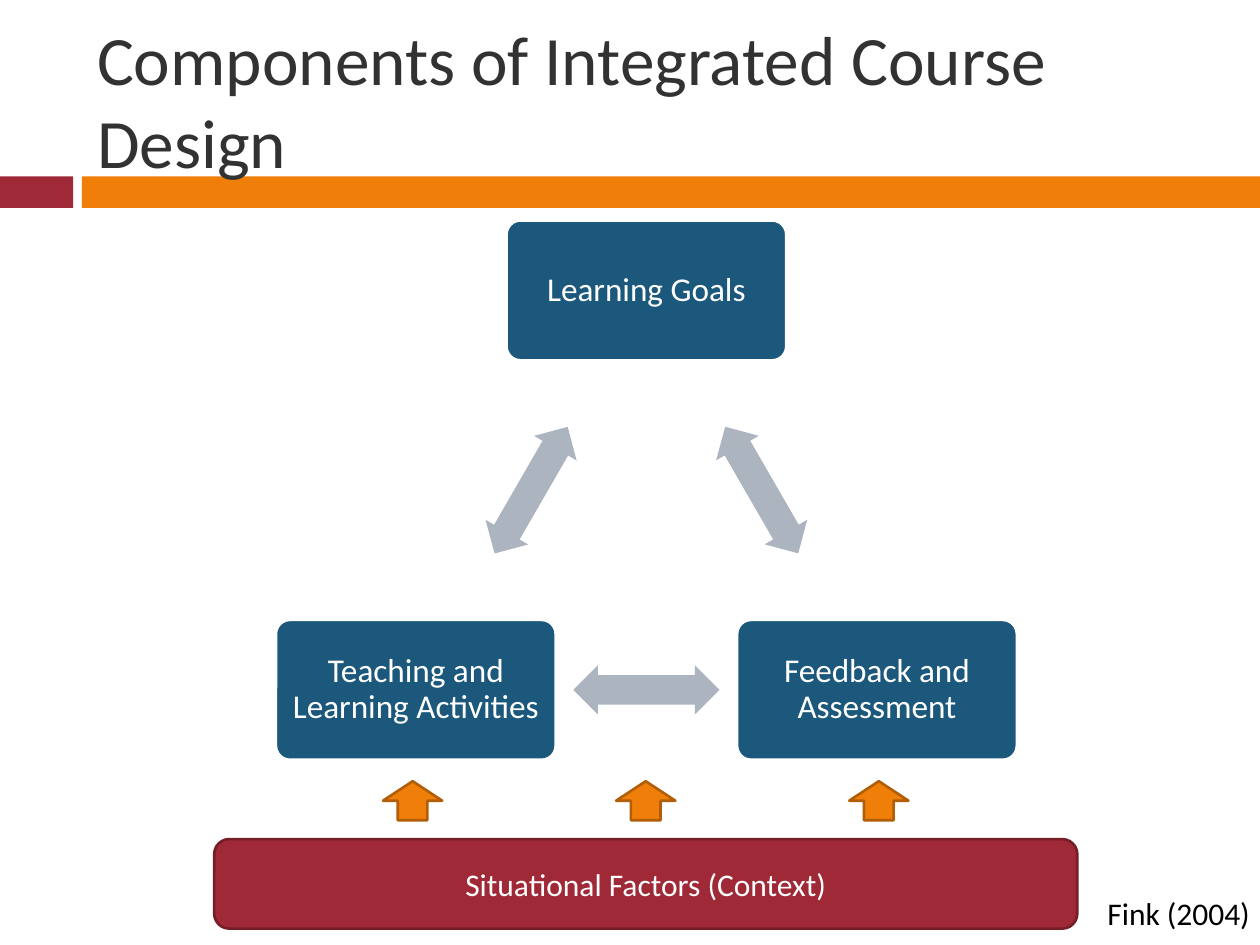
from pptx import Presentation
from pptx.dml.color import RGBColor
from pptx.enum.shapes import MSO_SHAPE
from pptx.enum.text import MSO_ANCHOR, MSO_AUTO_SIZE, PP_ALIGN
from pptx.util import Inches, Pt

COLORS = {
    "red": "9F2936", "dark_red": "761E28",
    "orange": "F07F09", "dark_orange": "B25E07",
    "blue": "1B587C", "gray": "ACB5BF",
    "title": "323232", "white": "FFFFFF", "black": "000000",
}


def color(name):
    return RGBColor.from_string(COLORS[name])


def write(shape, text, size, ink, align=PP_ALIGN.CENTER, anchor=MSO_ANCHOR.MIDDLE,
          spacing=None, inset=None, wrap=True):
    frame = shape.text_frame
    frame.word_wrap = wrap
    frame.vertical_anchor = anchor
    if inset is not None:
        frame.margin_left = frame.margin_right = Inches(inset)
        frame.margin_top = frame.margin_bottom = Inches(inset)
    para = frame.paragraphs[0]
    para.alignment = align
    if spacing:
        para.line_spacing = spacing
    span = para.add_run()
    span.text = text
    span.font.size = Pt(size)
    span.font.name = "Calibri"
    span.font.color.rgb = color(ink)


def add_block(page, kind, box, fill, line=None, adjustments=(), rotation=0):
    shape = page.shapes.add_shape(kind, *(Inches(length) for length in box))
    shape.shadow.inherit = False
    shape.fill.solid()
    shape.fill.fore_color.rgb = color(fill)
    if line:
        shape.line.color.rgb = color(line)
        shape.line.width = Pt(1.5)
    else:
        shape.line.fill.background()
    for index, value in enumerate(adjustments):
        shape.adjustments[index] = value
    shape.rotation = rotation
    return shape


def centered(center, width, height):
    return center[0] - width / 2, center[1] - height / 2, width, height


def add_header(page, box):
    left, top, width, height = box
    # The title overlaps the band, so it goes in front of it
    title = page.shapes.title
    band_top, band_height, red_width, orange_left = top + 1.15, 0.25, 0.58, 0.65
    bands = [(left, red_width, "red"), (left + orange_left, width - orange_left, "orange")]
    for band_left, band_width, fill in bands:
        band = add_block(page, MSO_SHAPE.RECTANGLE,
                         (band_left, band_top, band_width, band_height), fill)
        title._element.addprevious(band._element)
    title.left, title.top = Inches(left + 0.67), Inches(top)
    title.width, title.height = Inches(8.92), Inches(height)
    title.text_frame.auto_size = MSO_AUTO_SIZE.NONE
    write(title, "Components of Integrated Course Design", 39.6, "title", align=PP_ALIGN.LEFT)


def add_cycle(page, box):
    left, top, width, height = box
    node_width, node_height = 2.22, 1.11
    first_row, last_row = top + node_height / 2, top + height - node_height / 2
    centers = [
        (left + width / 2, first_row),
        (left + width - node_width / 2, last_row),
        (left + node_width / 2, last_row),
    ]
    labels = ["Learning Goals", "Feedback and Assessment", "Teaching and Learning Activities"]
    for index, (center, label) in enumerate(zip(centers, labels)):
        node = add_block(page, MSO_SHAPE.ROUNDED_RECTANGLE,
                         centered(center, node_width, node_height),
                         "blue", line="white", adjustments=[0.1])
        write(node, label, 19, "white", spacing=0.9, inset=0.08)
        # Double arrow halfway to the next node
        following = centers[(index + 1) % len(centers)]
        middle = [(a + b) / 2 for a, b in zip(center, following)]
        add_block(page, MSO_SHAPE.LEFT_RIGHT_ARROW, centered(middle, 1.16, 0.39), "gray",
                  adjustments=[0.6, 0.5], rotation=60 + 120 * index)


def add_context(page, box):
    left, top, width, height = box
    arrow_height, bar_height = 0.31, 0.71
    bar = add_block(page, MSO_SHAPE.ROUNDED_RECTANGLE,
                    (left, top + height - bar_height, width, bar_height),
                    "red", line="dark_red")
    write(bar, "Situational Factors (Context)", 18, "white")
    # Arrows spread evenly about the middle of the bar
    for step in (-1, 0, 1):
        center = left + width / 2 + 1.85 * step, top + arrow_height / 2
        add_block(page, MSO_SHAPE.UP_ARROW, centered(center, 0.47, arrow_height),
                  "orange", line="dark_orange")


def add_citation(page, box):
    citation = page.shapes.add_textbox(*(Inches(length) for length in box))
    write(citation, "Fink (2004)", 18, "black", align=PP_ALIGN.LEFT,
          anchor=MSO_ANCHOR.TOP, wrap=False)
    citation.text_frame.auto_size = MSO_AUTO_SIZE.SHAPE_TO_FIT_TEXT


def main():
    deck = Presentation()
    deck.slide_width, deck.slide_height = Inches(10), Inches(7.5)
    page = deck.slides.add_slide(deck.slide_layouts[5])
    add_header(page, (0, 0.25, 10, 1.08))
    add_cycle(page, (2.19, 1.75, 5.88, 4.28))
    add_context(page, (1.7, 6.2, 6.85, 1.17))
    add_citation(page, (8.69, 7.05, 1.35, 0.4))
    deck.save("out.pptx")


if __name__ == "__main__":
    main()
